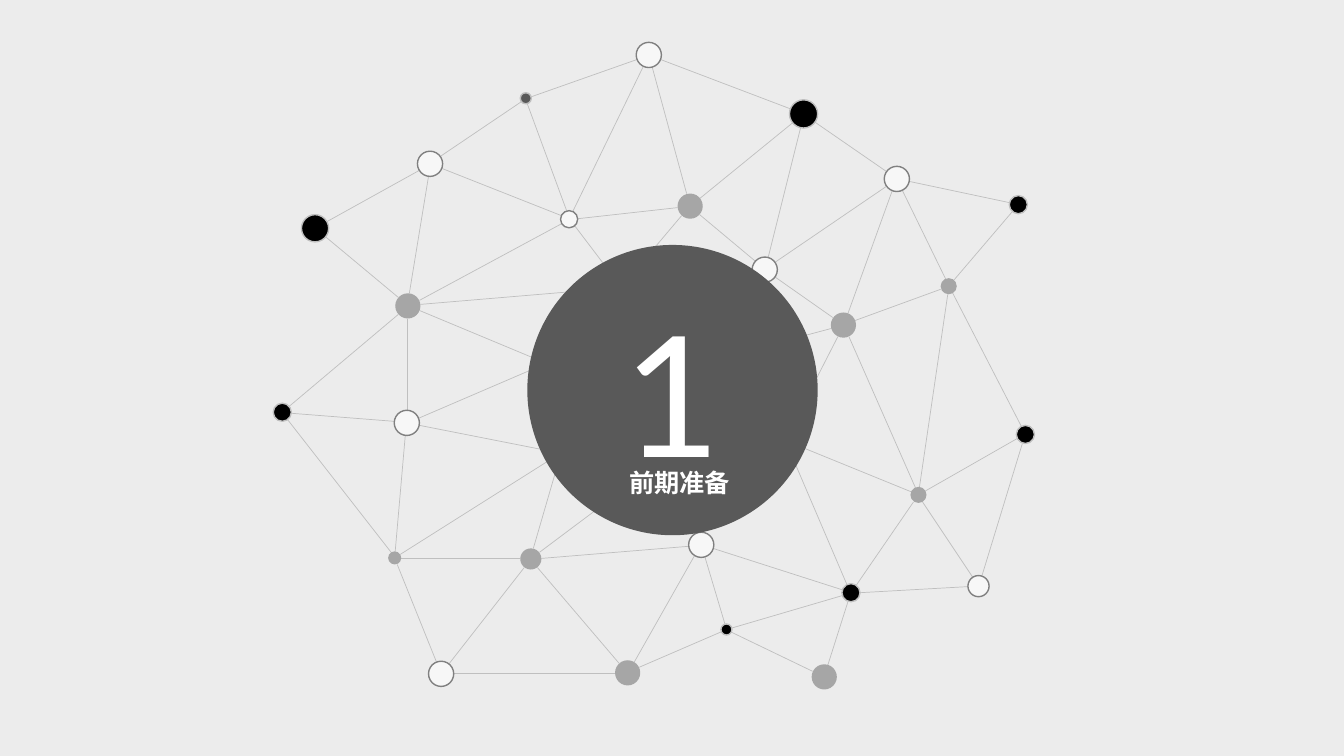
from math import hypot
from typing import NamedTuple

from lxml.etree import SubElement
from pptx import Presentation
from pptx.dml.color import RGBColor
from pptx.enum.shapes import MSO_CONNECTOR, MSO_SHAPE
from pptx.enum.text import MSO_ANCHOR, MSO_AUTO_SIZE, PP_ALIGN
from pptx.oxml.ns import qn
from pptx.util import Emu, Pt

EMU_PER_PX = 9144  # 100 px to the inch
BACKGROUND, DARK, WHITE, LINK_GREY = "ECECEC", "595959", "FFFFFF", "BFBFBF"


class Circle(NamedTuple):
    left: int
    top: int
    size: int = 25

    def edge_towards(self, other: "Circle") -> tuple[int, int]:
        """Point of this circle's rim that faces the centre of the other one."""
        radius = self.size / 2
        center_x, center_y = self.left + radius, self.top + radius
        run = other.left + other.size / 2 - center_x
        rise = other.top + other.size / 2 - center_y
        share = radius / hypot(run, rise)
        return round(center_x + run * share), round(center_y + rise * share)


class CircleStyle(NamedTuple):
    fill: str
    outline: str | None = None


DISC = Circle(523, 243, 288)

DOTS = {
    CircleStyle("000000", LINK_GREY): {
        "a": Circle(271, 400, 18), "b": Circle(1008, 422, 18), "c": Circle(299, 213, 27),
        "d": Circle(783, 99, 28), "e": Circle(1001, 194, 18), "f": Circle(835, 579, 18),
        "g": Circle(715, 619, 11),
    },
    CircleStyle("F7F7F7", "808080"): {
        "h": Circle(391, 407), "i": Circle(683, 528), "j": Circle(631, 42),
        "k": Circle(960, 571, 21), "l": Circle(414, 150), "m": Circle(746, 255),
        "n": Circle(877, 165), "o": Circle(556, 209, 17), "p": Circle(425, 656),
    },
    CircleStyle("A6A6A6"): {
        "q": Circle(516, 544, 21), "r": Circle(385, 547, 13), "s": Circle(903, 483, 16),
        "t": Circle(672, 192), "u": Circle(824, 310), "v": Circle(392, 291),
        "w": Circle(933, 276, 16), "x": Circle(805, 659), "y": Circle(610, 655),
    },
    CircleStyle(DARK, LINK_GREY): {"z": Circle(516, 92, 11)},
}

# Points within the disc at which links end
ANCHORS = {
    "A": Circle(765, 423, 27), "B": Circle(613, 474, 18), "C": Circle(536, 355, 11),
    "D": Circle(548, 441, 17), "E": Circle(668, 352), "F": Circle(607, 276, 18),
}

# Each dot with the dots it is linked to
LINKS = {
    "a": "rhv", "b": "ks", "c": "vl", "d": "jmt", "r": "hqD", "h": "CD", "q": "DBi",
    "l": "zvo", "v": "hCoF", "j": "ozt", "o": "Fzt", "t": "Fm", "n": "dewmu",
    "w": "sebu", "s": "ukfA", "u": "mAE", "f": "Akxgi", "p": "yqr", "g": "iyx", "y": "qi",
}


def px(length: int) -> Emu:
    return Emu(length * EMU_PER_PX)


def colour(hex_code: str) -> RGBColor:
    return RGBColor.from_string(hex_code)


def draw_link(page, start: Circle, end: Circle) -> None:
    ends = start.edge_towards(end) + end.edge_towards(start)
    line = page.shapes.add_connector(MSO_CONNECTOR.STRAIGHT, *map(px, ends))
    line.line.color.rgb = colour(LINK_GREY)
    line.line.width = Pt(0.5)
    SubElement(line._element.spPr, qn("a:effectLst"))


def draw_circle(page, circle: Circle, style: CircleStyle):
    left, top, size = map(px, circle)
    shape = page.shapes.add_shape(MSO_SHAPE.OVAL, left, top, size, size)
    shape.shadow.inherit = False
    shape.fill.solid()
    shape.fill.fore_color.rgb = colour(style.fill)
    if style.outline:
        shape.line.color.rgb = colour(style.outline)
        shape.line.width = Pt(1)
    else:
        shape.line.fill.background()
    return shape


def write(frame, text: str, alignment: PP_ALIGN, **font_values) -> None:
    para = frame.paragraphs[0]
    para.alignment = alignment
    span = para.add_run()
    span.text = text
    span.font.color.rgb = colour(WHITE)
    for name, value in font_values.items():
        setattr(span.font, name, value)


def draw_network(page) -> None:
    places = dict(ANCHORS)
    for dots in DOTS.values():
        places.update(dots)
    for start, ends in LINKS.items():
        for end in ends:
            draw_link(page, places[start], places[end])
    for style, dots in DOTS.items():
        for dot in dots.values():
            draw_circle(page, dot, style)


def draw_title(page) -> None:
    disc = draw_circle(page, DISC, CircleStyle(DARK))
    disc.text_frame.vertical_anchor = MSO_ANCHOR.MIDDLE
    write(disc.text_frame, "1", PP_ALIGN.CENTER, name="Lato", size=Pt(120))

    box = page.shapes.add_textbox(px(604), px(459), px(134), px(40))
    frame_values = {
        "word_wrap": False,
        "auto_size": MSO_AUTO_SIZE.SHAPE_TO_FIT_TEXT,
        "margin_left": px(20),
        "margin_right": px(14),
    }
    for name, value in frame_values.items():
        setattr(box.text_frame, name, value)
    write(box.text_frame, "前期准备", PP_ALIGN.LEFT, name="Arial", size=Pt(18), bold=True)


def main() -> None:
    deck = Presentation()
    deck.slide_width, deck.slide_height = px(1333), px(750)
    page = deck.slides.add_slide(deck.slide_layouts[6])
    page.background.fill.solid()
    page.background.fill.fore_color.rgb = colour(BACKGROUND)
    draw_network(page)
    draw_title(page)
    deck.save("out.pptx")


if __name__ == "__main__":
    main()
